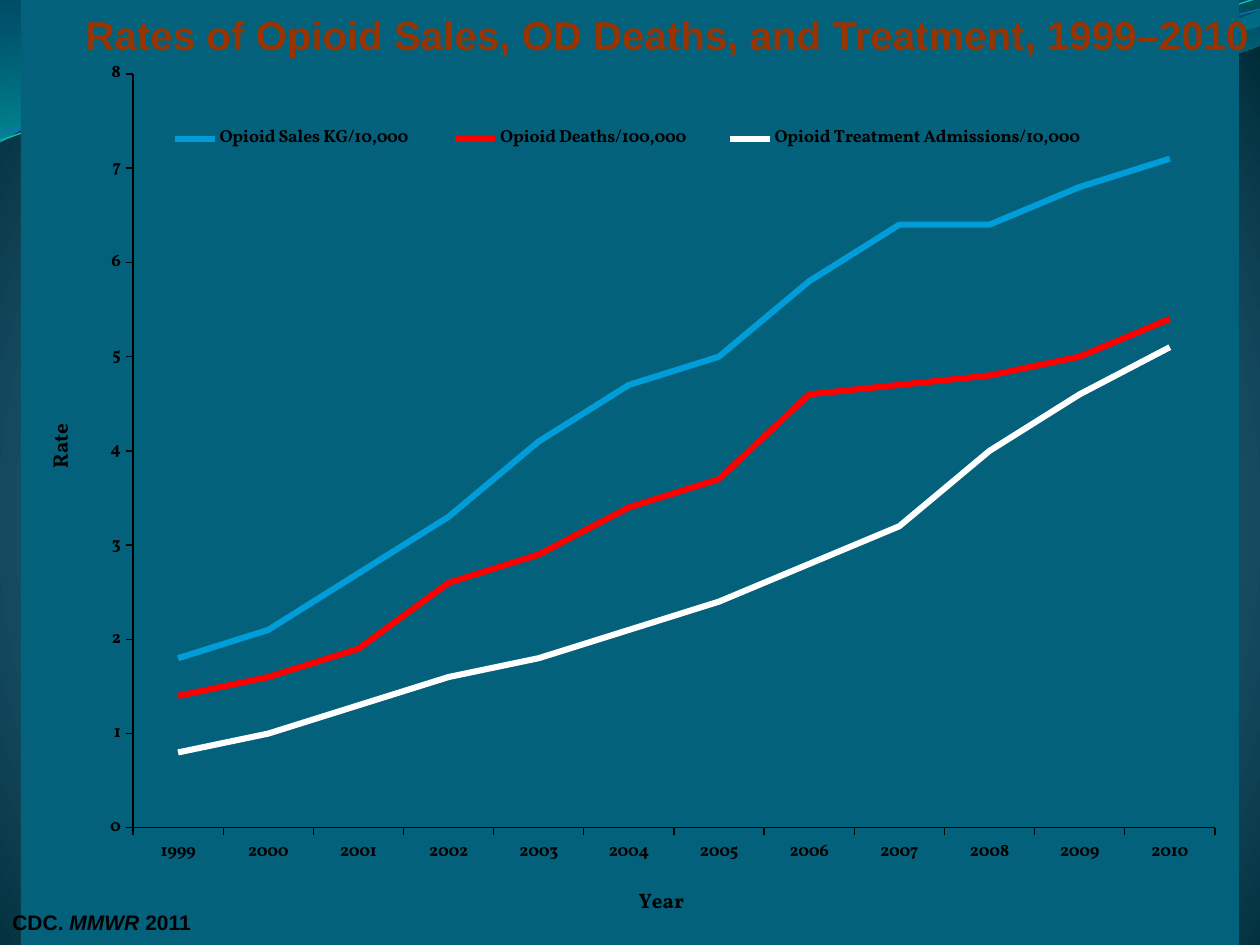
from lxml import etree
from pptx import Presentation
from pptx.chart.data import CategoryChartData
from pptx.dml.color import RGBColor
from pptx.enum.chart import XL_CHART_TYPE as ChartType, XL_LEGEND_POSITION as LegendPos
from pptx.enum.chart import XL_TICK_MARK as Tick
from pptx.enum.text import MSO_ANCHOR as Anchor, MSO_AUTO_SIZE as AutoSize, PP_ALIGN as Align
from pptx.oxml import parse_xml
from pptx.oxml.ns import nsdecls, qn
from pptx.util import Emu, Pt

SCALE = 914400 / 126  # EMU per px
WIDTH, HEIGHT = 1260, 945
CHART_BOX = (21, 0, 1218, 945)
LINE_ROTATION = 357.3

BLACK = RGBColor(0, 0, 0)
WHITE = RGBColor(255, 255, 255)
RED = RGBColor(255, 0, 0)
BLUE = RGBColor(0x00, 0x9D, 0xD9)
TEAL = RGBColor(0x04, 0x61, 0x7B)
RUST = RGBColor(0x99, 0x33, 0x00)
AQUA = RGBColor(0x0A, 0xB8, 0xBF)
COBALT = RGBColor(0x0F, 0x6F, 0xC6)

YEARS = [str(year) for year in range(1999, 2011)]
SERIES = [
    ("Opioid Sales KG/10,000 ", BLUE,
     (1.8, 2.1, 2.7, 3.3, 4.1, 4.7, 5, 5.8, 6.4, 6.4, 6.8, 7.1)),
    ("Opioid Deaths/100,000", RED,
     (1.4, 1.6, 1.9, 2.6, 2.9, 3.4, 3.7, 4.6, 4.7, 4.8, 5, 5.4)),
    ("Opioid Treatment Admissions/10,000", WHITE,
     (0.8, 1, 1.3, 1.6, 1.8, 2.1, 2.4, 2.8, 3.2, 4, 4.6, 5.1)),
]

# Waves: a pair is a straight step, six numbers are a Bezier curve
BROAD_WAVE = [(0, 0), (554, -1), (600, 21, 837, 79, 955, 79),
              (1075, 79, 1207, 33, 1260, 11), (1261, 45),
              (1239, 55, 1096, 96, 940, 95), (784, 95, 481, 35, 324, 43),
              (163, 45, 58, 105, -1, 142)]
RIGHT_WAVE = [(604, -1), (641, 14, 859, 78, 969, 82),
              (1079, 87, 1211, 40, 1260, 26), (1260, 0)]
# The thin lines are listed before their rotation
UPPER_LINE = [(-2, 111), (59, 91, 200, 53, 350, 54),
              (499, 54, 745, 119, 896, 115), (1049, 110, 1184, 46, 1260, 28)]
LOWER_LINE = [(-2, 102), (57, 95, 207, 58, 357, 59),
              (509, 59, 750, 113, 902, 109), (1052, 105, 1187, 53, 1262, 39)]


def px(length):
    return Emu(round(length * SCALE))


def apply(target, **values):
    for name, value in values.items():
        setattr(target, name, value)


def place(shape, box):
    apply(shape, **dict(zip(("left", "top", "width", "height"), map(px, box))))


def set_gradient(parent, stops, direction):
    """Replace the solid fill of parent by stops of (position, colour, opacity)."""
    marks = "".join(
        f'<a:gs pos="{pos * 1000}"><a:srgbClr val="{colour}">'
        f'<a:alpha val="{opacity * 1000}"/></a:srgbClr></a:gs>'
        for pos, colour, opacity in stops)
    gradient = parse_xml(f'<a:gradFill {nsdecls("a")} rotWithShape="1">'
                         f'<a:gsLst>{marks}</a:gsLst>{direction}</a:gradFill>')
    parent.replace(parent.find(qn("a:solidFill")), gradient)


def set_background(page):
    page.background.fill.solid()
    circle = ('<a:path path="circle"><a:fillToRect l="10000" t="110000" '
              'r="10000" b="100000"/></a:path>')
    set_gradient(page.element.find(".//" + qn("p:bgPr")),
                 [(0, "4AA0D6", 100), (25, "4C98C7", 100), (100, "002C38", 100)], circle)


def add_curve(page, steps, closed):
    """Build the outline through its end points, then bend the curved steps."""
    ends = [step[-2:] for step in steps]
    builder = page.shapes.build_freeform(*ends[0], scale=SCALE)
    builder.add_line_segments(ends[1:], close=closed)
    shape = builder.convert_to_shape()
    shape.shadow.inherit = False
    left, top = (min(values) for values in zip(*ends))
    segments = list(shape.element.iter(qn("a:lnTo")))
    for segment, step in zip(segments, steps[1:]):
        if len(step) == 6:
            bend = etree.Element(qn("a:cubicBezTo"))
            for x, y in zip(step[::2], step[1::2]):
                etree.SubElement(bend, qn("a:pt"), x=str(x - left), y=str(y - top))
            segment.getparent().replace(segment, bend)
    return shape


def add_wave(page, steps, stops):
    wave = add_curve(page, steps, True)
    wave.line.fill.background()
    wave.fill.solid()
    set_gradient(wave.element.spPr, stops, '<a:lin ang="5400000" scaled="1"/>')


def add_wave_line(page, steps, colour, width):
    wave = add_curve(page, steps, False)
    wave.rotation = LINE_ROTATION
    wave.fill.background()
    wave.line.color.rgb = colour
    wave.line.width = Pt(width)


def set_layout(element, left, top, width=None, height=None, inner=False):
    """Place a chart part by px on the slide."""
    for old in element.findall(qn("c:layout")):
        element.remove(old)
    x0, y0, full_width, full_height = CHART_BOX
    values = {"x": (left - x0) / full_width, "y": (top - y0) / full_height}
    if width:
        values.update(w=width / full_width, h=height / full_height)
    layout = parse_xml(f'<c:layout {nsdecls("c")}><c:manualLayout/></c:layout>')
    manual = layout[0]
    entries = [("layoutTarget", "inner")] if inner else []
    entries += [("xMode", "edge"), ("yMode", "edge")]
    entries += [(name, f"{value:.4f}") for name, value in values.items()]
    for name, value in entries:
        etree.SubElement(manual, qn("c:" + name)).set("val", value)
    overlay = element.find(qn("c:overlay"))
    if overlay is None:
        element.insert(0, layout)
    else:
        overlay.addprevious(layout)


def format_axis(axis, title, left, top):
    apply(axis, has_major_gridlines=False, major_tick_mark=Tick.OUTSIDE,
          minor_tick_mark=Tick.NONE)
    axis.format.line.width = Pt(0.75)
    axis.format.line.color.rgb = BLACK
    axis.tick_labels.font.bold = True
    axis.tick_labels.font.color.rgb = BLACK
    frame = axis.axis_title.text_frame
    frame.text = title
    font = frame.paragraphs[0].runs[0].font
    apply(font, size=Pt(12), bold=True, name="Vollkorn")
    font.color.rgb = BLACK
    set_layout(axis.axis_title._element, left, top)


def add_rate_chart(page):
    data = CategoryChartData()
    data.categories = YEARS
    for name, _, values in SERIES:
        data.add_series(name, values)
    chart = page.shapes.add_chart(ChartType.LINE, *map(px, CHART_BOX), data).chart
    chart.has_title = False
    apply(chart.font, size=Pt(10), name="Vollkorn")
    chart.font.color.rgb = WHITE
    space = chart._chartSpace
    space.find(qn("c:chart")).addnext(parse_xml(
        f'<c:spPr {nsdecls("c", "a")}><a:solidFill><a:srgbClr val="{TEAL}"/></a:solidFill>'
        '<a:ln><a:noFill/></a:ln></c:spPr>'))
    set_layout(space.find(".//" + qn("c:plotArea")), 133, 74, 1082, 754, inner=True)

    for series, (_, colour, _) in zip(chart.plots[0].series, SERIES):
        series.smooth = False
        series.format.line.width = Pt(3.5)
        series.format.line.color.rgb = colour

    format_axis(chart.category_axis, "Year", 635, 883)
    format_axis(chart.value_axis, "Rate", 42, 420)
    apply(chart.value_axis, minimum_scale=0, maximum_scale=8, major_unit=1)

    chart.has_legend = True
    apply(chart.legend, position=LegendPos.TOP, include_in_layout=False)
    chart.legend.font.bold = True
    chart.legend.font.color.rgb = BLACK
    set_layout(chart.legend._element, 137, 122, 981, 34)


def write_text(shape, box, size, colour, spans):
    place(shape, box)
    frame = shape.text_frame
    apply(frame, word_wrap=True, auto_size=AutoSize.SHAPE_TO_FIT_TEXT,
          vertical_anchor=Anchor.TOP)
    para = frame.paragraphs[0]
    para.alignment = Align.LEFT
    for text, italic in spans:
        span = para.add_run()
        span.text = text
        apply(span.font, name="Arial", size=Pt(size), bold=True, italic=italic)
        span.font.color.rgb = colour


def main():
    deck = Presentation()
    apply(deck, slide_width=px(WIDTH), slide_height=px(HEIGHT))
    page = deck.slides.add_slide(deck.slide_layouts[5])

    # Background with waves
    set_background(page)
    add_wave(page, BROAD_WAVE, [(0, "0074A1", 45), (100, "00C6CF", 55)])
    add_wave(page, RIGHT_WAVE, [(0, "00A1A9", 30), (80, "008BBF", 45)])
    add_wave_line(page, UPPER_LINE, AQUA, 0.85)
    add_wave_line(page, LOWER_LINE, COBALT, 0.75)

    add_rate_chart(page)

    # Title in front of the chart, then the citation
    title = page.shapes.title
    page.shapes._spTree.append(title.element)
    write_text(title, (73, 4, 1197, 62), 23, RUST,
               [("Rates of Opioid Sales, OD Deaths, and Treatment, 1999–2010", False)])
    citation = page.shapes.add_textbox(0, 0, 0, 0)
    write_text(citation, (0, 903, 1260, 38), 12, BLACK,
               [("CDC. ", False), ("MMWR", True), (" 2011", False)])

    deck.save("out.pptx")


if __name__ == "__main__":
    main()
